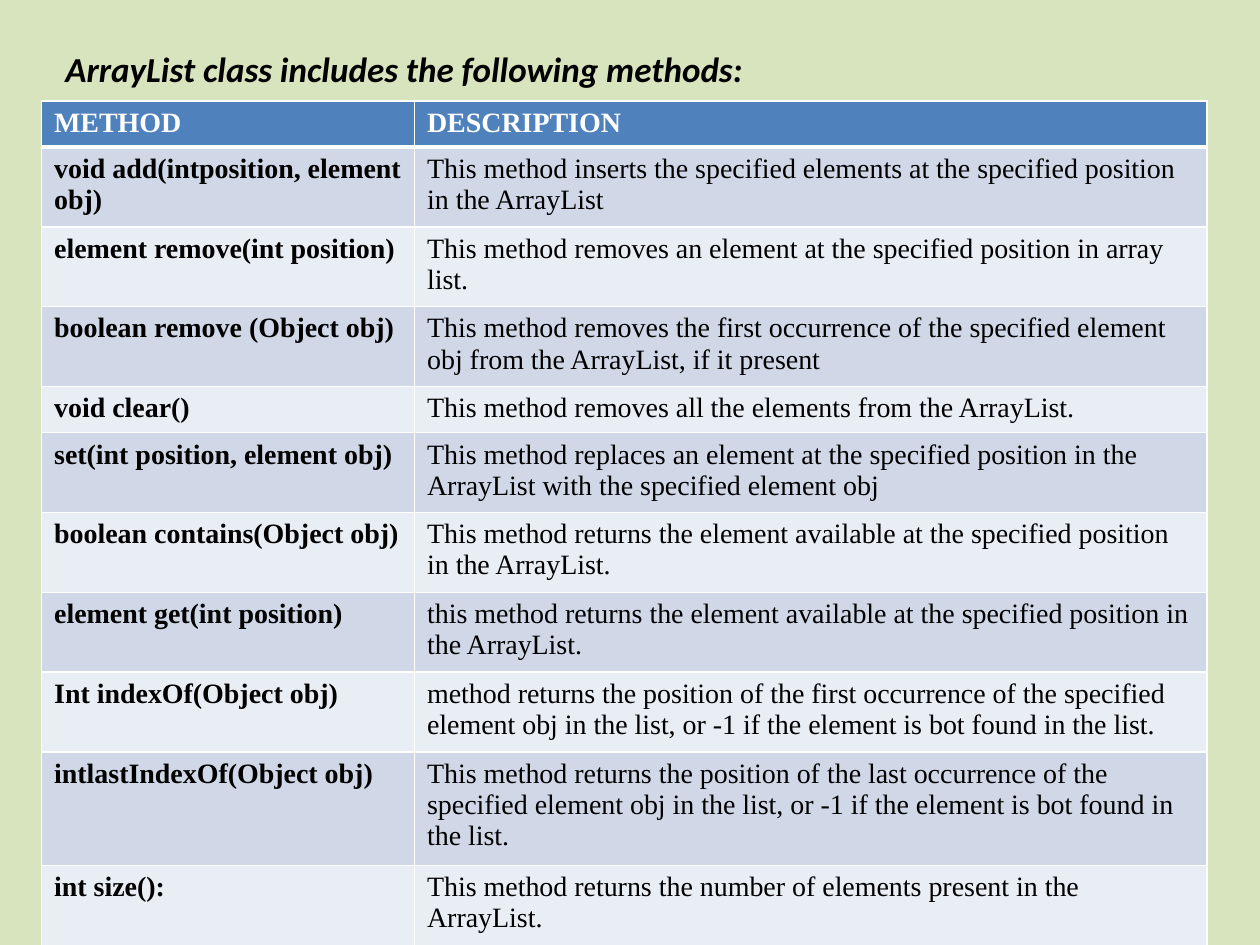
from dataclasses import dataclass

from lxml.etree import SubElement as Sub
from pptx import Presentation
from pptx.dml.color import RGBColor as Color
from pptx.oxml.ns import qn
from pptx.util import Inches, Pt


@dataclass(frozen=True)
class Theme:
    page: str = "D7E4BD"
    head: str = "4F81BD"
    bands: tuple = ("D0D8E8", "E9EDF4")
    ink: str = "000000"
    light: str = "FFFFFF"
    title_font: str = "Calibri"
    table_font: str = "Times New Roman"
    title_size: int = 20
    table_size: int = 16
    rule: int = 1
    head_rule: int = 3


THEME = Theme()
WIDTH, HEIGHT = 10, 7.5
TITLE_BOX = (0.42, 0.33, 9.58, 0.44)
TABLE_BOX = (0.33, 0.8, 9.25, 6.7)
METHOD_SHARE = 0.32
LINE_HEIGHTS = {1: 0.34, 2: 0.59, 3: 0.84}

TITLE = "ArrayList class includes the following methods:"
METHODS = [
    ("METHOD", "DESCRIPTION", 1),
    ("void add(intposition, element obj)",
     "This method inserts the specified elements at the specified position in the ArrayList", 2),
    ("element remove(int position)",
     "This method removes an element at the specified position in array list.", 2),
    ("boolean remove (Object obj)",
     "This method removes the first occurrence of the specified element obj "
     "from the ArrayList, if it present", 2),
    ("void clear()", "This method removes all the elements from the ArrayList.", 1),
    ("set(int position, element obj)",
     "This method replaces an element at the specified position in the ArrayList "
     "with the specified element obj", 2),
    ("boolean contains(Object obj)",
     "This method returns the element available at the specified position in the ArrayList.", 2),
    ("element get(int position)",
     "this method returns the element available at the specified position in the ArrayList.", 2),
    ("Int indexOf(Object obj)",
     "method returns the position of the first occurrence of the specified element obj "
     "in the list, or -1 if the element is bot found in the list.", 2),
    ("intlastIndexOf(Object obj)",
     "This method returns the position of the last occurrence of the specified element obj "
     "in the list, or -1 if the element is bot found in the list.", 3),
    ("int size():", "This method returns the number of elements present in the ArrayList.", 2),
]


def write(frame, text, color, **formats):
    span = frame.paragraphs[0].add_run()
    span.text = text
    span.font.color.rgb = Color.from_string(color)
    for name, value in formats.items():
        setattr(span.font, name, value)


def paint(fill, color):
    fill.solid()
    fill.fore_color.rgb = Color.from_string(color)


def rule_cell(cell, top, bottom):
    properties = cell._tc.get_or_add_tcPr()
    widths = {"lnL": THEME.rule, "lnR": THEME.rule, "lnT": top, "lnB": bottom}
    for side, width in widths.items():
        line = Sub(properties, qn(f"a:{side}"), w=str(Pt(width)))
        Sub(Sub(line, qn("a:solidFill")), qn("a:srgbClr"), val=THEME.light)


def add_title(page, box):
    frame = page.shapes.add_textbox(*map(Inches, box)).text_frame
    frame.word_wrap = True
    write(frame, TITLE, THEME.ink, name=THEME.title_font,
          size=Pt(THEME.title_size), bold=True, italic=True)


def add_methods(page, box):
    table = page.shapes.add_table(len(METHODS), 2, *map(Inches, box)).table
    table.horz_banding = False
    width, height = box[2:]
    for column, share in zip(table.columns, (METHOD_SHARE, 1 - METHOD_SHARE)):
        column.width = Inches(width * share)
    scale = height / sum(LINE_HEIGHTS[lines] for *_, lines in METHODS)
    for index, (*texts, lines) in enumerate(METHODS):
        row = table.rows[index]
        row.height = Inches(LINE_HEIGHTS[lines] * scale)
        is_head = index == 0
        color = THEME.light if is_head else THEME.ink
        background = THEME.head if is_head else THEME.bands[(index - 1) % 2]
        top = THEME.head_rule if index == 1 else THEME.rule
        bottom = THEME.head_rule if is_head else THEME.rule
        for column, (cell, text) in enumerate(zip(row.cells, texts)):
            rule_cell(cell, top, bottom)
            paint(cell.fill, background)
            write(cell.text_frame, text, color, name=THEME.table_font,
                  size=Pt(THEME.table_size), bold=is_head or column == 0)


def main():
    deck = Presentation()
    deck.slide_width, deck.slide_height = Inches(WIDTH), Inches(HEIGHT)
    page = deck.slides.add_slide(deck.slide_layouts[6])
    paint(page.background.fill, THEME.page)
    add_title(page, TITLE_BOX)
    add_methods(page, TABLE_BOX)
    deck.save("out.pptx")


if __name__ == "__main__":
    main()
